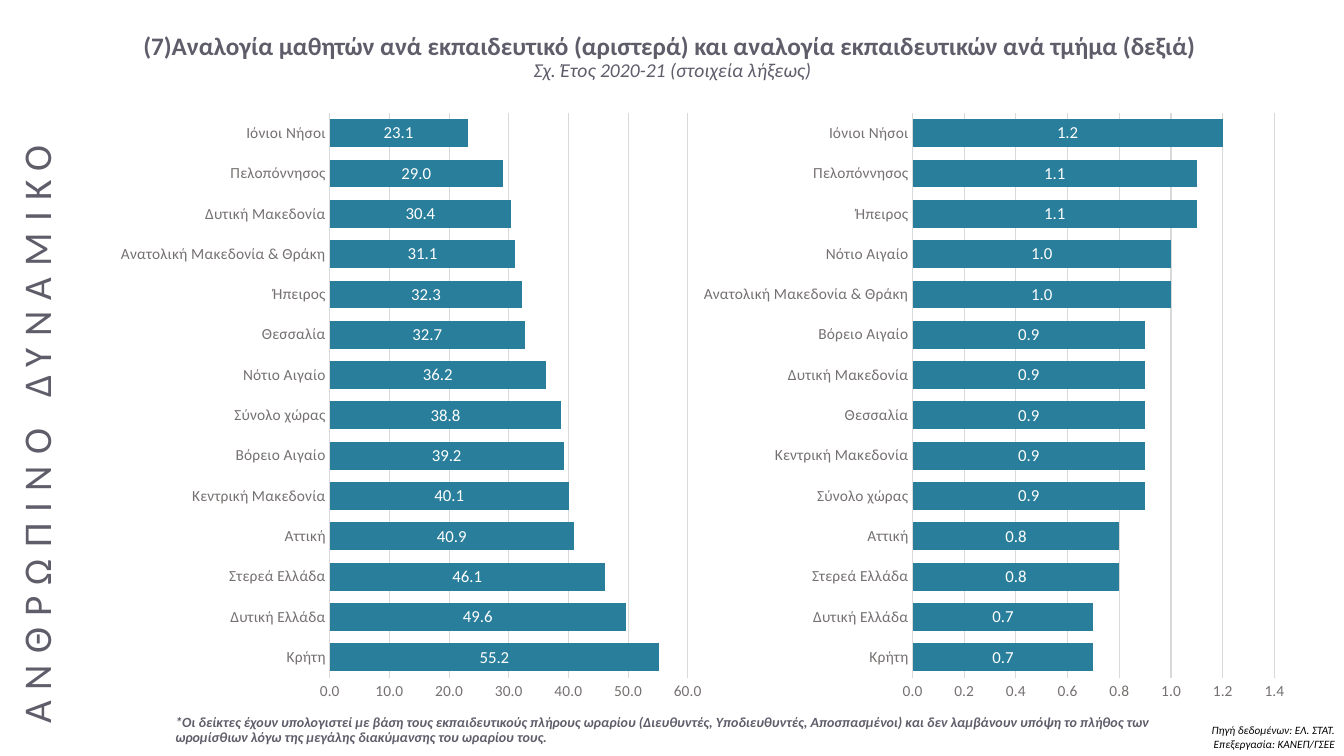
from pptx import Presentation
from pptx.chart.data import CategoryChartData
from pptx.dml.color import RGBColor
from pptx.enum.chart import XL_CHART_TYPE as CT, XL_LABEL_POSITION as LP, XL_TICK_MARK as TM
from pptx.enum.text import MSO_ANCHOR as ANCHOR, MSO_AUTO_SIZE as FIT, PP_ALIGN as AL
from pptx.util import Inches, Pt

FONT = "Calibri"
INK, GREY, GRID, TEAL = "5F5D6A", "767171", "D9D9D9", "297E9B"

PUPILS_PER_TEACHER = [
    ("Κρήτη", 55.2), ("Δυτική Ελλάδα", 49.6), ("Στερεά Ελλάδα", 46.1),
    ("Αττική", 40.9), ("Κεντρική Μακεδονία", 40.1), ("Βόρειο Αιγαίο", 39.2),
    ("Σύνολο χώρας", 38.8), ("Νότιο Αιγαίο", 36.2), ("Θεσσαλία", 32.7),
    ("Ήπειρος", 32.3), ("Ανατολική Μακεδονία & Θράκη", 31.1),
    ("Δυτική Μακεδονία", 30.4), ("Πελοπόννησος", 29), ("Ιόνιοι Νήσοι", 23.1),
]
TEACHERS_PER_CLASS = [
    ("Κρήτη", 0.7), ("Δυτική Ελλάδα", 0.7), ("Στερεά Ελλάδα", 0.8),
    ("Αττική", 0.8), ("Σύνολο χώρας", 0.9), ("Κεντρική Μακεδονία", 0.9),
    ("Θεσσαλία", 0.9), ("Δυτική Μακεδονία", 0.9), ("Βόρειο Αιγαίο", 0.9),
    ("Ανατολική Μακεδονία & Θράκη", 1), ("Νότιο Αιγαίο", 1),
    ("Ήπειρος", 1.1), ("Πελοπόννησος", 1.1), ("Ιόνιοι Νήσοι", 1.2),
]


def rgb(color):
    return RGBColor.from_string(color)


def set_font(font, size, color, bold=False, italic=False):
    font.name, font.size = FONT, Pt(size)
    font.bold, font.italic = bold, italic
    font.color.rgb = rgb(color)


def set_line(line, color):
    line.color.rgb = rgb(color)
    line.width = Pt(0.75)


def place(sp, left, top, width, height):
    sp.left, sp.top = Inches(left), Inches(top)
    sp.width, sp.height = Inches(width), Inches(height)


def add_title(slide, heading, subtitle):
    sp = slide.shapes.title
    place(sp, 0.92, 0, 11.5, 1.14)
    tf = sp.text_frame
    tf.auto_size, tf.vertical_anchor = FIT.NONE, ANCHOR.MIDDLE
    p = tf.paragraphs[0]
    p.alignment, p.line_spacing = AL.CENTER, 0.9
    r = p.add_run()
    r.text = heading
    set_font(r.font, 18, INK, bold=True)
    p.add_line_break()
    r = p.add_run()
    r.text = subtitle
    set_font(r.font, 14, INK, italic=True)


def add_text(slide, box, text, size, color, align=AL.LEFT, anchor=ANCHOR.MIDDLE,
             spacing=0.9, bold=False, italic=False):
    sp = slide.shapes.add_textbox(*map(Inches, box))
    tf = sp.text_frame
    tf.word_wrap, tf.vertical_anchor = True, anchor
    p = tf.paragraphs[0]
    p.text = text
    p.alignment, p.line_spacing = align, spacing
    set_font(p.font, size, color, bold, italic)
    return sp


def add_bars(slide, left, rows):
    data = CategoryChartData(number_format="0.0")
    data.categories = [region for region, _ in rows]
    data.add_series("Series 1", [value for _, value in rows])
    box = map(Inches, (left, 1, 6, 6.07))
    chart = slide.shapes.add_chart(CT.BAR_STACKED, *box, data).chart
    chart.has_legend = chart.has_title = False
    set_font(chart.font, 10, "000000")

    for axis in (chart.category_axis, chart.value_axis):
        axis.major_tick_mark = axis.minor_tick_mark = TM.NONE
        set_font(axis.tick_labels.font, 11, GREY)
    set_line(chart.category_axis.format.line, GRID)
    values = chart.value_axis
    values.format.line.fill.background()
    set_line(values.major_gridlines.format.line, GRID)
    values.tick_labels.number_format = "#,##0.0"
    values.tick_labels.number_format_is_linked = False

    plot = chart.plots[0]
    plot.gap_width, plot.overlap = 45, 100
    plot.vary_by_categories = False
    fill = plot.series[0].format.fill
    fill.solid()
    fill.fore_color.rgb = rgb(TEAL)
    labels = plot.series[0].data_labels
    labels.show_value, labels.position = True, LP.CENTER
    labels.number_format, labels.number_format_is_linked = "0.0", False
    set_font(labels.font, 12, "FFFFFF")


def main():
    prs = Presentation()
    prs.slide_width, prs.slide_height = Inches(13.33), Inches(7.5)
    slide = prs.slides.add_slide(prs.slide_layouts[5])

    source = add_text(slide, (7.39, 7.13, 5.95, 0.37),
                      "Πηγή δεδομένων: ΕΛ. ΣΤΑΤ.\vΕπεξεργασία: ΚΑΝΕΠ/ΓΣΕΕ", 8, "000000",
                      align=AL.RIGHT, anchor=ANCHOR.TOP, spacing=1.0, italic=True)
    source.text_frame.auto_size = FIT.SHAPE_TO_FIT_TEXT
    add_title(slide,
              "(7)Αναλογία μαθητών ανά εκπαιδευτικό (αριστερά) και αναλογία "
              "εκπαιδευτικών ανά τμήμα (δεξιά) ",
              "Σχ. Έτος 2020-21 (στοιχεία λήξεως)")
    add_bars(slide, 1.08, PUPILS_PER_TEACHER)
    add_bars(slide, 6.86, TEACHERS_PER_CLASS)
    add_text(slide, (1.64, 7, 10.13, 0.5),
             "*Οι δείκτες έχουν υπολογιστεί με βάση τους εκπαιδευτικούς πλήρους ωραρίου "
             "(Διευθυντές, Υποδιευθυντές, Αποσπασμένοι) και δεν λαμβάνουν υπόψη το πλήθος "
             "των ωρομίσθιων λόγω της μεγάλης διακύμανσης του ωραρίου τους.",
             10, INK, bold=True, italic=True)
    side = add_text(slide, (-3, 3.74, 6.76, 1.14), "ΑΝΘΡΩΠΙΝΟ ΔΥΝΑΜΙΚΟ", 28, INK,
                    align=AL.CENTER)
    side.rotation = 270
    r = side.text_frame.paragraphs[0].runs[0]
    r.font._element.set("spc", "800")

    prs.save("out.pptx")


if __name__ == "__main__":
    main()
